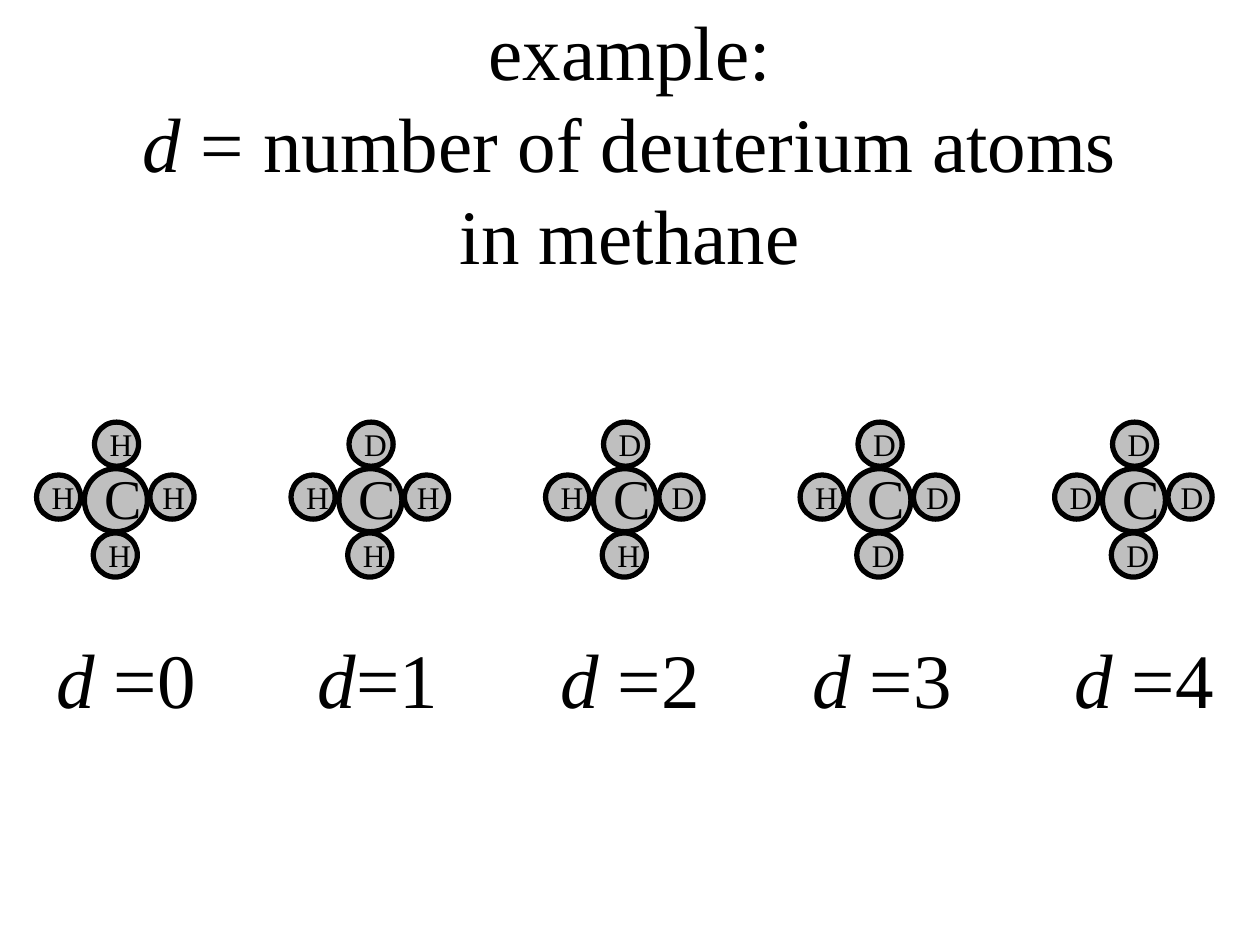
from typing import NamedTuple

from pptx import Presentation, util as u
from pptx.dml.color import RGBColor
from pptx.enum import shapes, text

PX = u.Inches(1) // 100
FONT = "Times New Roman"
BLACK, GREY = "000000", "BFBFBF"
CARBON_SIZE, HYDROGEN_SIZE = 50, 35
LETTER_WIDTH, LETTER_HEIGHT = 40, 55
FIRST_LEFT, MOLECULE_TOP, MOLECULE_PITCH = 67, 372, 202


class Atom(NamedTuple):
    """Circle and letter positions, relative to the carbon circle's corner."""
    circle: tuple[int, int]
    letter: tuple[int, int]
    deuterium_from: int


class Label(NamedTuple):
    left: int
    value: str


ATOMS = [
    Atom((8, -37), (9, -47), 1),
    Atom((52, 5), (51, -5), 2),
    Atom((-38, 5), (-37, -5), 4),
    Atom((7, 51), (8, 41), 3),
]
LABELS = [
    Label(25, " =0"),
    Label(225, "=1"),
    Label(425, " =2"),
    Label(625, " =3"),
    Label(833, " =4"),
]


def color(value: str) -> RGBColor:
    return RGBColor.from_string(value)


def px(*lengths: int) -> list[int]:
    return [length * PX for length in lengths]


def write(shape, parts: list[str], size: int) -> None:
    """Fill a shape with centred runs; the run "d" is italic."""
    frame = shape.text_frame
    frame.auto_size = text.MSO_AUTO_SIZE.NONE
    frame.word_wrap = True
    frame.vertical_anchor = text.MSO_ANCHOR.MIDDLE
    paragraph = frame.paragraphs[0]
    paragraph.alignment = text.PP_ALIGN.CENTER
    for part in parts:
        for index, line in enumerate(part.split("\n")):
            if index:
                paragraph.add_line_break()
            if line:
                run = paragraph.add_run()
                run.text = line
                run.font.name = FONT
                run.font.size = u.Pt(size)
                run.font.italic = line == "d"
                run.font.color.rgb = color(BLACK)


def draw_atom(group, circle: tuple[int, int], diameter: int,
              letter_at: tuple[int, int], letter: str, size: int) -> None:
    shape = group.shapes.add_shape(
        shapes.MSO_SHAPE.OVAL, *px(*circle, diameter, diameter))
    shape.shadow.inherit = False
    shape.fill.solid()
    shape.fill.fore_color.rgb = color(GREY)
    shape.line.color.rgb = color(BLACK)
    shape.line.width = u.Pt(3)
    box = group.shapes.add_textbox(*px(*letter_at, LETTER_WIDTH, LETTER_HEIGHT))
    write(box, [letter], size)


def draw_methane(slide, left: int, top: int, deuterium_count: int) -> None:
    def place(offset: tuple[int, int]) -> tuple[int, int]:
        return left + offset[0], top + offset[1]

    group = slide.shapes.add_group_shape()
    draw_atom(group, (left, top), CARBON_SIZE, place((6, -5)), "C", 32)
    for atom in ATOMS:
        letter = "D" if deuterium_count >= atom.deuterium_from else "H"
        draw_atom(group, place(atom.circle), HYDROGEN_SIZE,
                  place(atom.letter), letter, 18)


def main() -> None:
    presentation = Presentation()
    presentation.slide_width, presentation.slide_height = px(1000, 750)
    slide = presentation.slides.add_slide(presentation.slide_layouts[5])

    title = slide.shapes.title
    title.left, title.top, title.width, title.height = px(0, 50, 1000, 125)
    write(title, ["example:\n", "d", " = number of deuterium atoms\nin methane"], 44)

    for count in range(len(LABELS)):
        draw_methane(slide, FIRST_LEFT + count * MOLECULE_PITCH, MOLECULE_TOP, count)
    for label in LABELS:
        box = slide.shapes.add_textbox(*px(label.left, 475, 150, 125))
        write(box, ["d", label.value], 44)

    presentation.save("out.pptx")


if __name__ == "__main__":
    main()
